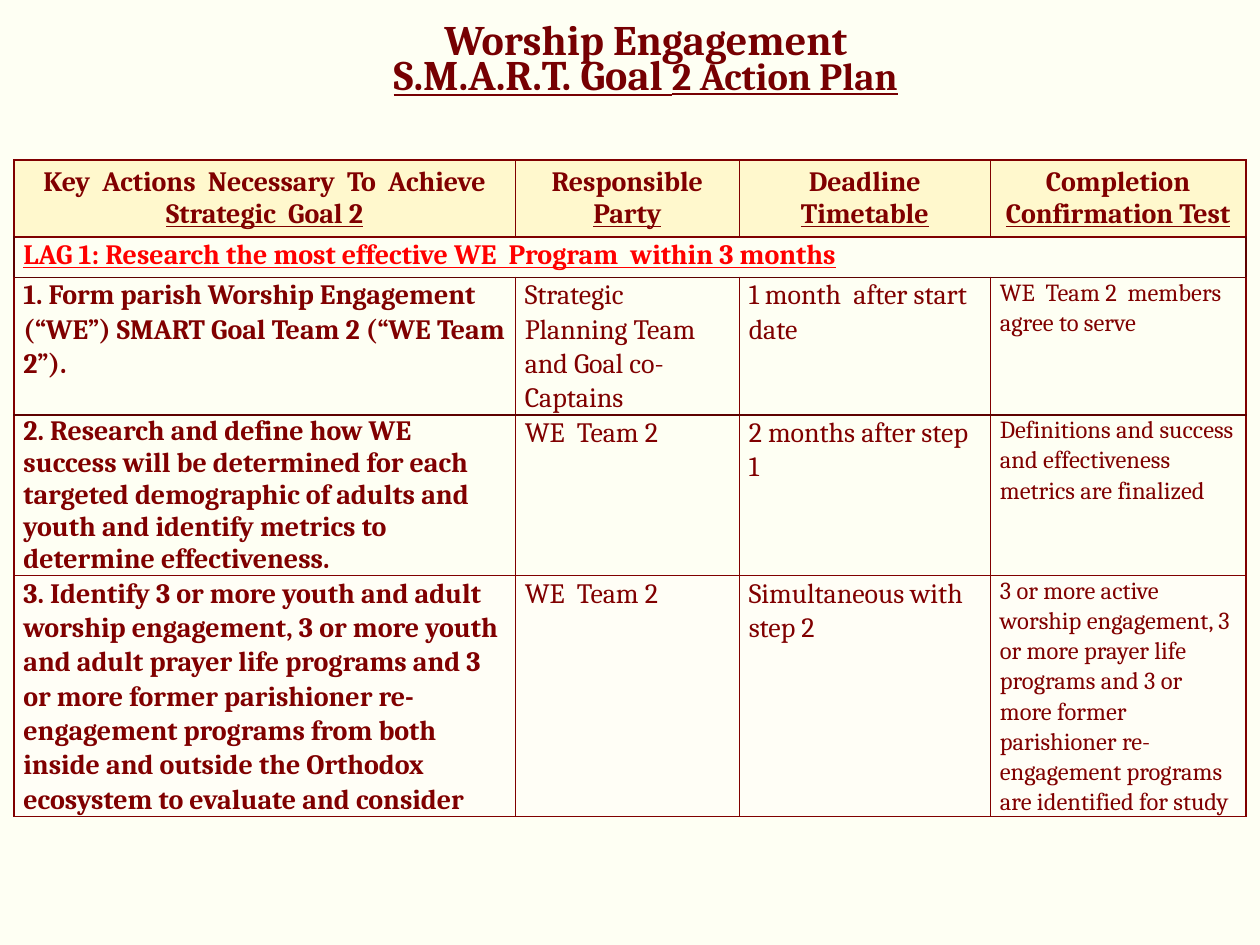
from lxml import etree
from pptx import Presentation
from pptx import util as u
from pptx.dml.color import RGBColor
from pptx.enum import text
from pptx.oxml import ns

Pt = u.Pt
THEME = {
    "font": "Cambria",
    "background": "FEFFF3",
    "title": "760002",
    "body": "800000",
    "goal": "FF0000",
    "dark_border": "5D0100",
    "header_fill": "FFF8CD",
    "last_fill": "FFFEF6",
    "title_size": 24,
    "subtitle_size": 22,
    "body_size": 16,
    "test_size": 14,
}


def add_run(paragraph, words, size="body_size", color="body", bold=False, underline=False):
    run = paragraph.add_run()
    run.text = words
    formats = {"name": THEME["font"], "size": Pt(THEME[size]), "bold": bold, "underline": underline}
    for name, value in formats.items():
        setattr(run.font, name, value)
    run.font.color.rgb = RGBColor.from_string(THEME[color])


def format_cell(cell, fill, margins, borders):
    properties = cell._tc.get_or_add_tcPr()
    for side, color in zip("LRTB", borders):
        line = etree.SubElement(properties, ns.qn(f"a:ln{side}"), w=str(Pt(1)))
        solid = etree.SubElement(line, ns.qn("a:solidFill"))
        etree.SubElement(solid, ns.qn("a:srgbClr"), val=THEME[color])
    if fill:
        cell.fill.solid()
        cell.fill.fore_color.rgb = RGBColor.from_string(THEME[fill])
    else:
        cell.fill.background()
    for side, margin in zip(("left", "right", "top", "bottom"), margins):
        setattr(cell, f"margin_{side}", Pt(margin))


presentation = Presentation()
presentation.slide_width, presentation.slide_height = Pt(720), Pt(540)
slide = presentation.slides.add_slide(presentation.slide_layouts[5])
slide.background.fill.solid()
slide.background.fill.fore_color.rgb = RGBColor.from_string(THEME["background"])

title = slide.shapes.title
for name, value in {"left": 70, "top": -9.5, "width": 598, "height": 90}.items():
    setattr(title, name, Pt(value))
title.text_frame.auto_size = text.MSO_AUTO_SIZE.NONE
title.text_frame.vertical_anchor = text.MSO_ANCHOR.MIDDLE
paragraph = title.text_frame.paragraphs[0]
paragraph.alignment = text.PP_ALIGN.CENTER
paragraph.line_spacing = 0.7
add_run(paragraph, "Worship Engagement", "title_size", "title", True)
paragraph.add_line_break()
add_run(paragraph, "S.M.A.R.T. Goal ", "title_size", "title", True, True)
add_run(paragraph, "2 Action Plan", "subtitle_size", "title", True, True)

headers = [
    ("Key  Actions  Necessary  To  Achieve", "Strategic  Goal 2"),
    ("Responsible", "Party"),
    ("Deadline", "Timetable"),
    ("Completion", "Confirmation Test"),
]
goal = "LAG 1: Research the most effective WE  Program  within 3 months"
actions = [
    (
        "1. Form parish Worship Engagement (“WE”) SMART Goal Team 2 (“WE Team 2”).",
        "Strategic Planning Team and Goal co-Captains",
        "1 month  after start date",
        "WE  Team 2  members agree to serve",
    ),
    (
        "2. Research and define how WE success will be determined for each targeted "
        "demographic of adults and youth and identify metrics to determine effectiveness.",
        "WE  Team 2",
        "2 months after step 1",
        "Definitions and success and effectiveness metrics are finalized",
    ),
    (
        "3. Identify 3 or more youth and adult worship engagement, 3 or more youth and adult "
        "prayer life programs and 3 or more former parishioner re-engagement programs from both "
        "inside and outside the Orthodox ecosystem to evaluate and consider",
        "WE  Team 2",
        "Simultaneous with step 2",
        "3 or more active worship engagement, 3 or more prayer life programs and 3 or more "
        "former parishioner re-engagement programs are identified for study",
    ),
]
column_widths = [286.5, 128, 143.5, 146]
row_heights = [40, 23, 37.5, 47.5, 76.5]

frame = slide.shapes.add_table(
    len(row_heights), len(column_widths), Pt(8), Pt(91.5), Pt(sum(column_widths)), Pt(sum(row_heights))
)
table = frame.table
table.first_row = table.horz_banding = False
for column, width in zip(table.columns, column_widths):
    column.width = Pt(width)
for row, height in zip(table.rows, row_heights):
    row.height = Pt(height)

header_margins, body_margins = (7.2, 7.2, 3.6, 3.6), (5.4, 5.4, 0, 0)
plain_borders = ["body"] * 4
goal_borders = ["dark_border", "dark_border", "body", "dark_border"]
action_borders = [
    ["body", "body", "dark_border", "dark_border"],
    ["body", "body", "dark_border", "body"],
    plain_borders,
]

for index, lines in enumerate(headers):
    cell = table.cell(0, index)
    format_cell(cell, "header_fill", header_margins, plain_borders)
    for number, words in enumerate(lines):
        paragraph = cell.text_frame.add_paragraph() if number else cell.text_frame.paragraphs[0]
        paragraph.alignment = text.PP_ALIGN.CENTER
        add_run(paragraph, words, bold=True, underline=number == 1)
    format_cell(table.cell(1, index), None, body_margins, goal_borders)

goal_cell = table.cell(1, 0)
goal_cell.merge(table.cell(1, 3))
paragraph = goal_cell.text_frame.paragraphs[0]
paragraph.line_spacing = 1.07
add_run(paragraph, goal, color="goal", bold=True, underline=True)

for number, action in enumerate(actions):
    for index, words in enumerate(action):
        cell = table.cell(number + 2, index)
        fill = "last_fill" if number == 2 else None
        format_cell(cell, fill, body_margins, action_borders[number])
        paragraph = cell.text_frame.paragraphs[0]
        paragraph.line_spacing = 1.0 if (number, index) == (1, 0) else 1.07
        add_run(paragraph, words, "test_size" if index == 3 else "body_size", bold=index == 0)

presentation.save("out.pptx")
